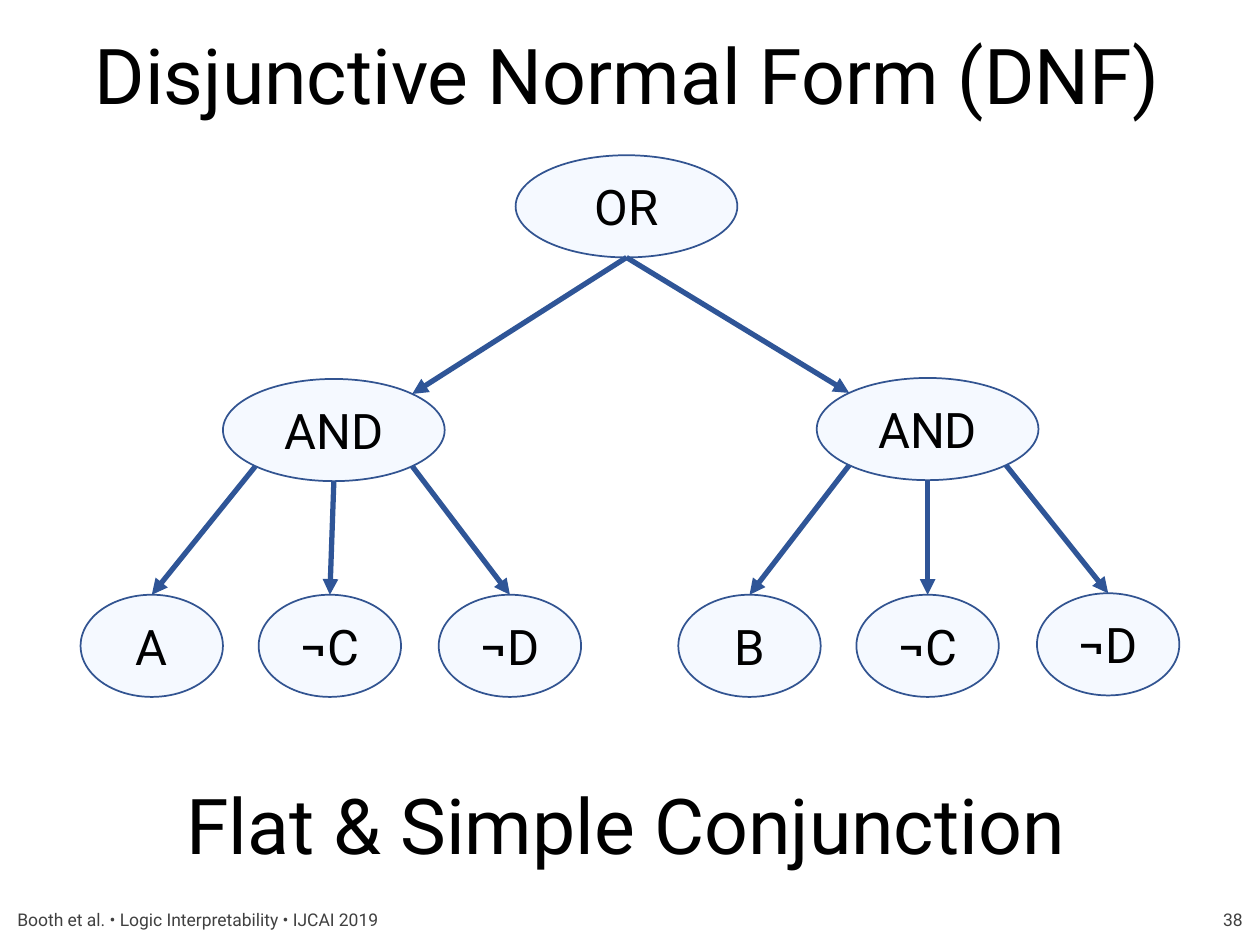
from math import cos, pi, sin

from lxml.etree import SubElement
from pptx import Presentation
from pptx.dml.color import RGBColor
from pptx.enum.shapes import MSO_CONNECTOR, MSO_SHAPE
from pptx.enum.text import MSO_ANCHOR, MSO_AUTO_SIZE, PP_ALIGN
from pptx.oxml.ns import qn
from pptx.util import Cm, Pt

BLACK = RGBColor(0x00, 0x00, 0x00)
GREY = RGBColor(0x40, 0x40, 0x40)
PALE_BLUE = RGBColor(0xD1, 0xE2, 0xFF)
OUTLINE_BLUE = RGBColor(0x32, 0x54, 0x91)
ARROW_BLUE = RGBColor(0x2F, 0x55, 0x97)

GATE_WIDTH, LEAF_WIDTH, NODE_HEIGHT = 4.47, 2.87, 2.06
DIAGONAL = pi / 4


def write(shape, text, size, color, align):
    frame = shape.text_frame
    frame.text = text
    frame.word_wrap = True
    frame.vertical_anchor = MSO_ANCHOR.MIDDLE
    paragraph = frame.paragraphs[0]
    paragraph.alignment = align
    font = paragraph.runs[0].font
    font.name, font.size, font.color.rgb = "Roboto", Pt(size), color


def rim_point(node, angle):
    """Return the point on an elliptical node at an angle measured clockwise from the right."""
    x = node.left + node.width / 2 * (1 + cos(angle))
    y = node.top + node.height / 2 * (1 + sin(angle))
    return round(x), round(y)


presentation = Presentation()
presentation.slide_width, presentation.slide_height = Cm(25.4), Cm(19.05)
slide = presentation.slides.add_slide(presentation.slide_layouts[6])
shapes = slide.shapes

# Footer
for text, left, width, align in [
    ("Booth et al. • Logic Interpretability • IJCAI 2019", 0.1, 9.8, PP_ALIGN.LEFT),
    ("38", 23.85, 1.45, PP_ALIGN.RIGHT),
]:
    footer = shapes.add_textbox(Cm(left), Cm(18.03), Cm(width), Cm(1.02))
    write(footer, text, 10, GREY, align)

# Headline and conclusion
for text, left, top, width in [
    ("Disjunctive Normal Form (DNF)", -0.58, 0.43, 26.47),
    ("Flat & Simple Conjunction", 0.99, 15.54, 23.27),
]:
    statement = shapes.add_textbox(Cm(left), Cm(top), Cm(width), Cm(2.13))
    write(statement, text, 44, BLACK, PP_ALIGN.CENTER)
    statement.text_frame.vertical_anchor = MSO_ANCHOR.TOP
    statement.text_frame.auto_size = MSO_AUTO_SIZE.SHAPE_TO_FIT_TEXT

# Tree nodes: key, label, centre x, centre y, width
nodes = {}
for key, label, x, y, width in [
    ("a", "A", 3.06, 13.02, LEAF_WIDTH),
    ("left not c", "¬C", 6.65, 13.02, LEAF_WIDTH),
    ("left not d", "¬D", 10.28, 13.02, LEAF_WIDTH),
    ("b", "B", 15.11, 13.02, LEAF_WIDTH),
    ("right not c", "¬C", 18.7, 13.02, LEAF_WIDTH),
    ("right not d", "¬D", 22.34, 12.99, LEAF_WIDTH),
    ("left and", "AND", 6.73, 8.67, GATE_WIDTH),
    ("right and", "AND", 18.7, 8.65, GATE_WIDTH),
    ("or", "OR", 12.63, 4.16, GATE_WIDTH),
]:
    node = shapes.add_shape(
        MSO_SHAPE.OVAL, Cm(x - width / 2), Cm(y - NODE_HEIGHT / 2), Cm(width), Cm(NODE_HEIGHT)
    )
    node.shadow.inherit = False
    node.fill.solid()
    node.fill.fore_color.rgb = PALE_BLUE
    fill_color = node.fill._xPr.find(qn("a:solidFill"))[0]
    SubElement(fill_color, qn("a:alpha"), val="20000")
    node.line.color.rgb = OUTLINE_BLUE
    node.line.width = Pt(1)
    write(node, label, 28, BLACK, PP_ALIGN.CENTER)
    nodes[key] = node

# Arrows: parent, angle on its rim, child, angle on its rim
TOP, BOTTOM = -pi / 2, pi / 2
LOWER_LEFT, LOWER_RIGHT = pi - DIAGONAL, DIAGONAL
UPPER_LEFT, UPPER_RIGHT = DIAGONAL - pi, -DIAGONAL
for parent, start, child, end in [
    ("or", BOTTOM, "left and", UPPER_RIGHT),
    ("or", BOTTOM, "right and", UPPER_LEFT),
    ("left and", LOWER_LEFT, "a", TOP),
    ("left and", BOTTOM, "left not c", TOP),
    ("left and", LOWER_RIGHT, "left not d", TOP),
    ("right and", LOWER_LEFT, "b", TOP),
    ("right and", BOTTOM, "right not c", TOP),
    ("right and", LOWER_RIGHT, "right not d", TOP),
]:
    arrow = shapes.add_connector(
        MSO_CONNECTOR.STRAIGHT, *rim_point(nodes[parent], start), *rim_point(nodes[child], end)
    )
    if end == TOP:
        arrow.end_connect(nodes[child], 0)
    arrow.line.color.rgb = ARROW_BLUE
    arrow.line.width = Pt(3)
    SubElement(arrow.line._get_or_add_ln(), qn("a:tailEnd"), type="triangle")
    SubElement(arrow._element.spPr, qn("a:effectLst"))

presentation.save("out.pptx")
